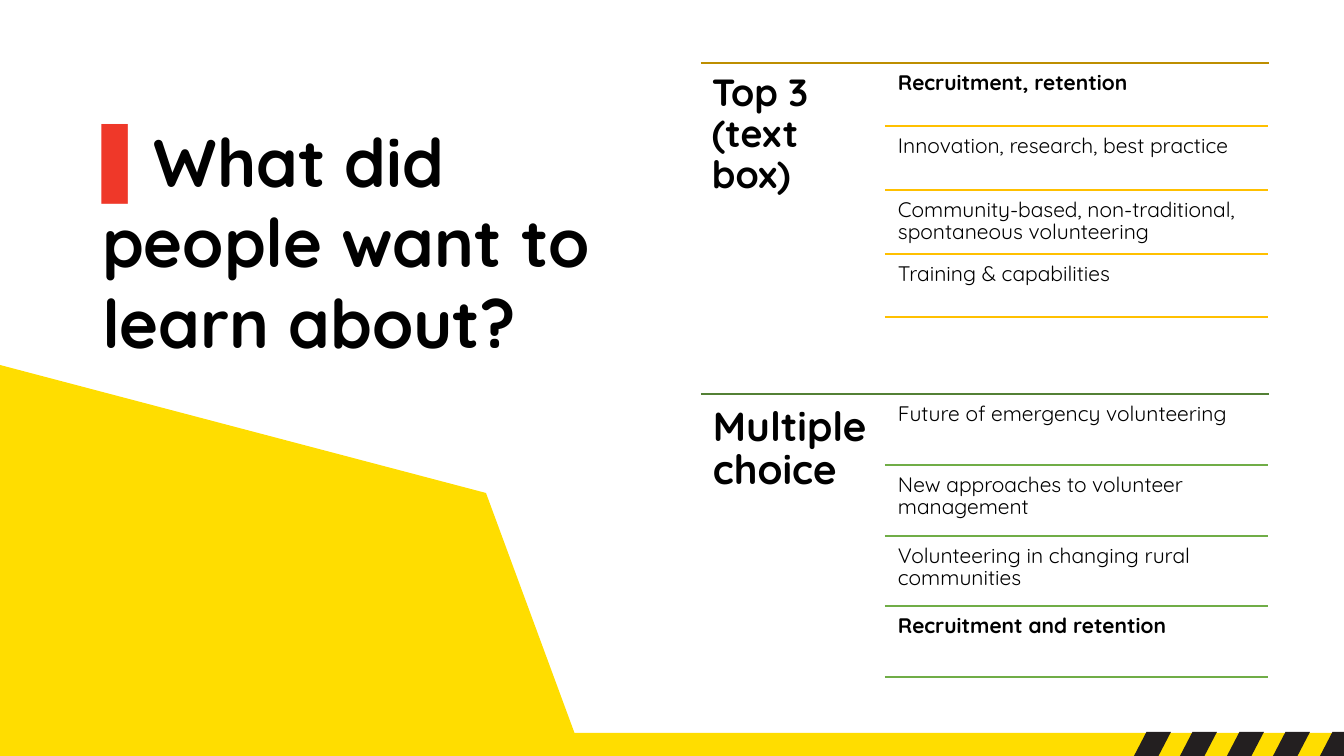
from lxml.etree import SubElement
from pptx import Presentation
from pptx.dml.color import RGBColor
from pptx.enum.shapes import MSO_CONNECTOR as CONN, MSO_SHAPE as SHAPE
from pptx.enum.text import MSO_ANCHOR as ANCHOR, MSO_AUTO_SIZE as AUTO, PP_ALIGN as ALIGN
from pptx.oxml.ns import qn
from pptx.util import Pt

PX = 914400 / 100.8
COLORS = {
    "yellow": "FFDD00",
    "stripe": "231F20",
    "red": "EF3829",
    "text": "000000",
    "gold": "BD8E00",
    "amber": "FFC000",
    "forest": "538035",
    "green": "70AD47",
}
SECTIONS = [
    ("Top 3 (text box)", 27, 11, 63, 254, "gold", "amber", [
        ("Recruitment, retention", True),
        ("Innovation, research, best practice", False),
        ("Community-based, non-traditional, spontaneous volunteering", False),
        ("Training & capabilities", False),
    ]),
    ("Multiple choice", 29, 12, 394, 283, "forest", "green", [
        ("Future of emergency volunteering", False),
        ("New approaches to volunteer management", False),
        ("Volunteering in changing rural communities", False),
        ("Recruitment and retention", True),
    ]),
]


def px(*lengths):
    return [round(n * PX) for n in lengths]


def rgb(name):
    return RGBColor.from_string(COLORS[name])


class SlideBuilder:
    font = "Quicksand"

    def __init__(self, slide):
        self.slide = slide
        self.shapes = slide.shapes

    def paint(self, sp, color):
        sp.shadow.inherit = False
        sp.fill.solid()
        sp.fill.fore_color.rgb = rgb(color)
        sp.line.fill.background()

    def style(self, r, size, color="text", bold=False):
        r.font.name = self.font
        r.font.size = Pt(size)
        r.font.bold = bold
        r.font.color.rgb = rgb(color)

    def shape(self, kind, x, y, w, h, color):
        sp = self.shapes.add_shape(kind, *px(x, y, w, h))
        self.paint(sp, color)
        return sp

    def polygon(self, points, color):
        builder = self.shapes.build_freeform(*points[0], scale=PX)
        builder.add_line_segments(points[1:], close=True)
        self.paint(builder.convert_to_shape(), color)

    def rule(self, x1, x2, y, color):
        line = self.shapes.add_connector(CONN.STRAIGHT, *px(x1, y, x2, y))
        line.line.color.rgb = rgb(color)
        line.line.width = Pt(1)
        SubElement(line._element.spPr, qn("a:effectLst"))

    def text(self, text, x, y, w, h, size, inset, bold):
        tf = self.shapes.add_textbox(*px(x, y, w, h)).text_frame
        tf.word_wrap = True
        tf.margin_left, tf.margin_top, tf.margin_right, tf.margin_bottom = px(*[inset] * 4)
        tf.text = text
        p = tf.paragraphs[0]
        p.line_spacing = 0.9
        self.style(p.runs[0], size, bold=bold)

    def title(self, marker, text, x, y, w, h, size):
        sp = self.shapes.title
        sp.left, sp.top, sp.width, sp.height = px(x, y, w, h)
        tf = sp.text_frame
        tf.word_wrap = True
        tf.auto_size = AUTO.NONE
        tf.vertical_anchor = ANCHOR.TOP
        p = tf.paragraphs[0]
        p.alignment = ALIGN.LEFT
        for part, color in ((marker, "red"), (text, "text")):
            r = p.add_run()
            r.text = part
            self.style(r, size, color, bold=True)

    def section(self, heading, size, inset, top, height, head_color, rule_color, items):
        self.rule(701, 1269, top, head_color)
        self.text(heading, 701, top, 185, height + 33, size, inset, True)
        step = height / len(items)
        for i, (item, bold) in enumerate(items):
            y = round(top + i * step)
            self.text(item, 892, y + 3, 376, round(step) - 3, 15, 6, bold)
            self.rule(885, 1268, round(top + (i + 1) * step), rule_color)


def main():
    prs = Presentation()
    prs.slide_width, prs.slide_height = px(1344, 756)
    s = SlideBuilder(prs.slides.add_slide(prs.slide_layouts[5]))

    s.shape(SHAPE.RECTANGLE, 0, 733, 1344, 23, "yellow")
    for i in range(5):
        stripe = s.shape(SHAPE.PARALLELOGRAM, 1134 + 93 * i // 2, 732, 37, 24, "stripe")
        stripe.adjustments[0] = 0.52
    s.polygon([(0, 365), (486, 493), (583, 756), (0, 756)], "yellow")

    for section in SECTIONS:
        s.section(*section)
    s.title("▌", "What did people want to learn about?", 92, 115, 533, 316, 48)

    prs.save("out.pptx")


if __name__ == "__main__":
    main()
